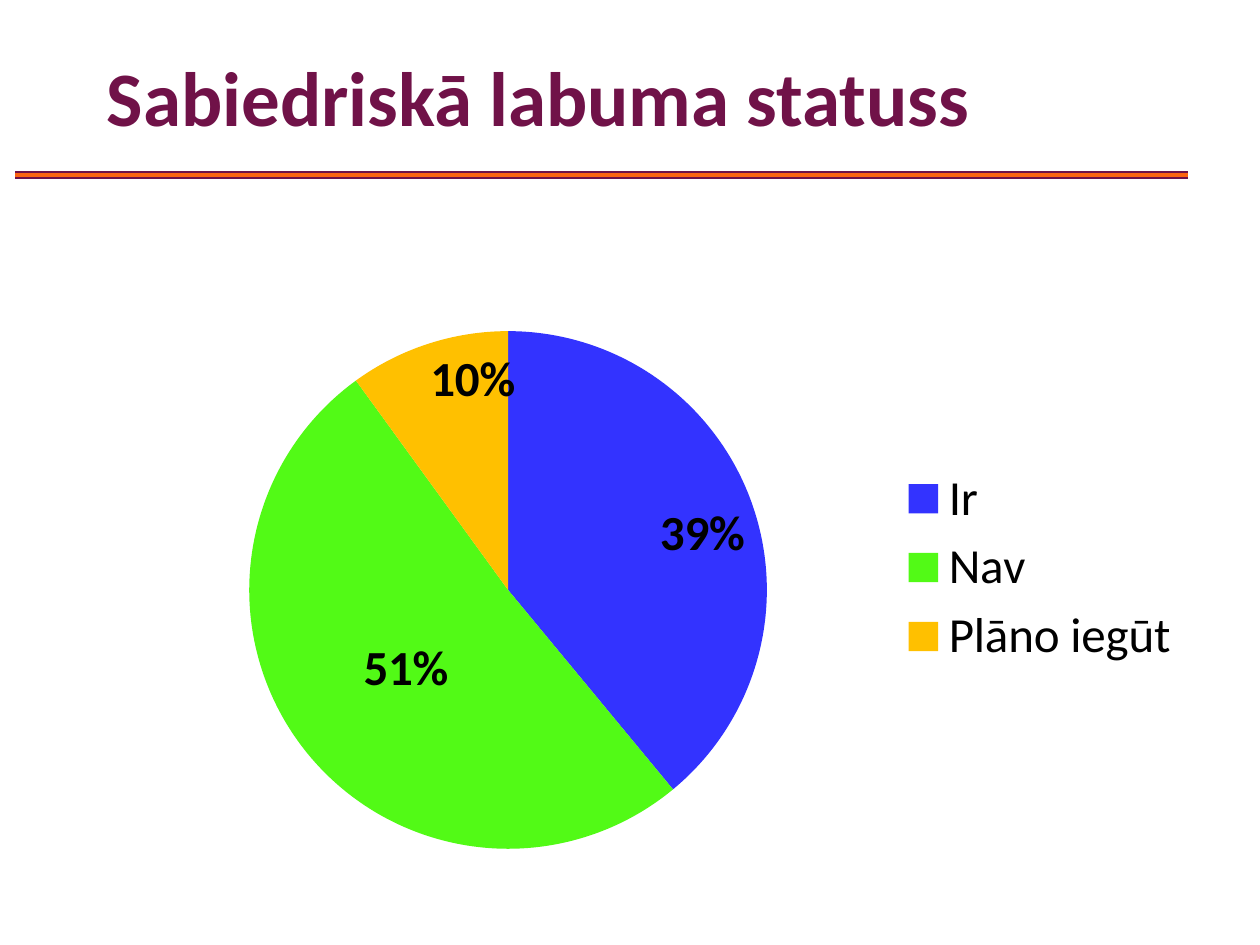
"""Build a slide with a pie chart of public benefit status."""
from lxml.etree import SubElement
from pptx import Presentation
from pptx.chart.data import CategoryChartData
from pptx.dml.color import RGBColor
from pptx.enum.chart import XL_CHART_TYPE as ChartType
from pptx.enum.chart import XL_LABEL_POSITION as LabelPosition
from pptx.enum.chart import XL_LEGEND_POSITION as LegendPosition
from pptx.enum.shapes import MSO_CONNECTOR as Connector
from pptx.enum.text import MSO_ANCHOR as Anchor
from pptx.oxml.ns import qn
from pptx.util import Inches, Pt

TITLE = "Sabiedriskā labuma statuss"
FONT = "Calibri"
COLORS = {"plum": "701248", "orange": "FC6410", "blue": "3333FF",
          "green": "52FA16", "amber": "FFC000", "black": "000000"}
RULES = [("plum", 4.5), ("orange", 2.25)]
SLICES = [
    ("Ir", 0.39, "blue", LabelPosition.INSIDE_END),
    ("Nav", 0.51, "green", LabelPosition.CENTER),
    ("Plāno iegūt", 0.1, "amber", LabelPosition.INSIDE_END),
]
CHART_FRAME = (0.5, 2.03, 9, 4.95)
PIE_FRAME = (1.98, 2.63, 4.11, 4.11)


def color(name):
    return RGBColor.from_string(COLORS[name])


def style(font, size, name="black", bold=False):
    font.name, font.size, font.bold = FONT, Pt(size), bold
    font.color.rgb = color(name)


def add_rules(slide):
    for name, width in RULES:
        rule = slide.shapes.add_connector(
            Connector.STRAIGHT, Inches(0.12), Inches(1.39), Inches(9.43), Inches(1.39))
        rule.line.color.rgb = color(name)
        rule.line.width = Pt(width)
        SubElement(rule._element.spPr, qn("a:effectLst"))


def add_title(slide):
    box = slide.shapes.add_textbox(Inches(0.75), Inches(0.13), Inches(8.68), Inches(1.26))
    frame = box.text_frame
    frame.word_wrap = True
    frame.vertical_anchor = Anchor.MIDDLE
    para = frame.paragraphs[0]
    para.text = TITLE
    style(para.font, 44, "plum", bold=True)


def place_pie(chart):
    left, top, width, height = CHART_FRAME
    pie_left, pie_top, pie_width, pie_height = PIE_FRAME
    plot_area = chart._chartSpace.chart.plotArea
    layout = plot_area.find(qn("c:layout"))
    if layout is None:
        layout = SubElement(plot_area, qn("c:layout"))
        plot_area.insert(0, layout)
    manual = SubElement(layout, qn("c:manualLayout"))
    settings = [
        ("layoutTarget", "inner"), ("xMode", "edge"), ("yMode", "edge"),
        ("x", round((pie_left - left) / width, 3)),
        ("y", round((pie_top - top) / height, 3)),
        ("w", round(pie_width / width, 3)),
        ("h", round(pie_height / height, 3)),
    ]
    for tag, value in settings:
        SubElement(manual, qn(f"c:{tag}")).set("val", str(value))


def add_status_chart(slide):
    data = CategoryChartData(number_format="0%")
    data.categories = [label for label, *_ in SLICES]
    data.add_series("Series 1", [value for _, value, *_ in SLICES])
    chart = slide.shapes.add_chart(
        ChartType.PIE, *(Inches(length) for length in CHART_FRAME), data).chart
    chart.has_title = False
    style(chart.font, 18)
    chart.has_legend = True
    chart.legend.position = LegendPosition.RIGHT
    chart.legend.include_in_layout = False
    style(chart.legend.font, 28)

    plot = chart.plots[0]
    plot.vary_by_categories = True
    series = plot.series[0]
    labels = series.data_labels
    labels.show_value = True
    labels.show_percentage = False
    labels.number_format = "0%"
    labels.number_format_is_linked = False
    style(labels.font, 28, bold=True)
    for index, (_, _, name, position) in enumerate(SLICES):
        point = series.points[index]
        point.format.fill.solid()
        point.format.fill.fore_color.rgb = color(name)
        point.data_label.position = position
        style(point.data_label.font, 28, bold=True)
    place_pie(chart)


def main():
    deck = Presentation()
    deck.slide_width, deck.slide_height = Inches(10), Inches(7.5)
    slide = deck.slides.add_slide(deck.slide_layouts[6])
    add_rules(slide)
    add_title(slide)
    add_status_chart(slide)
    deck.save("out.pptx")


if __name__ == "__main__":
    main()
